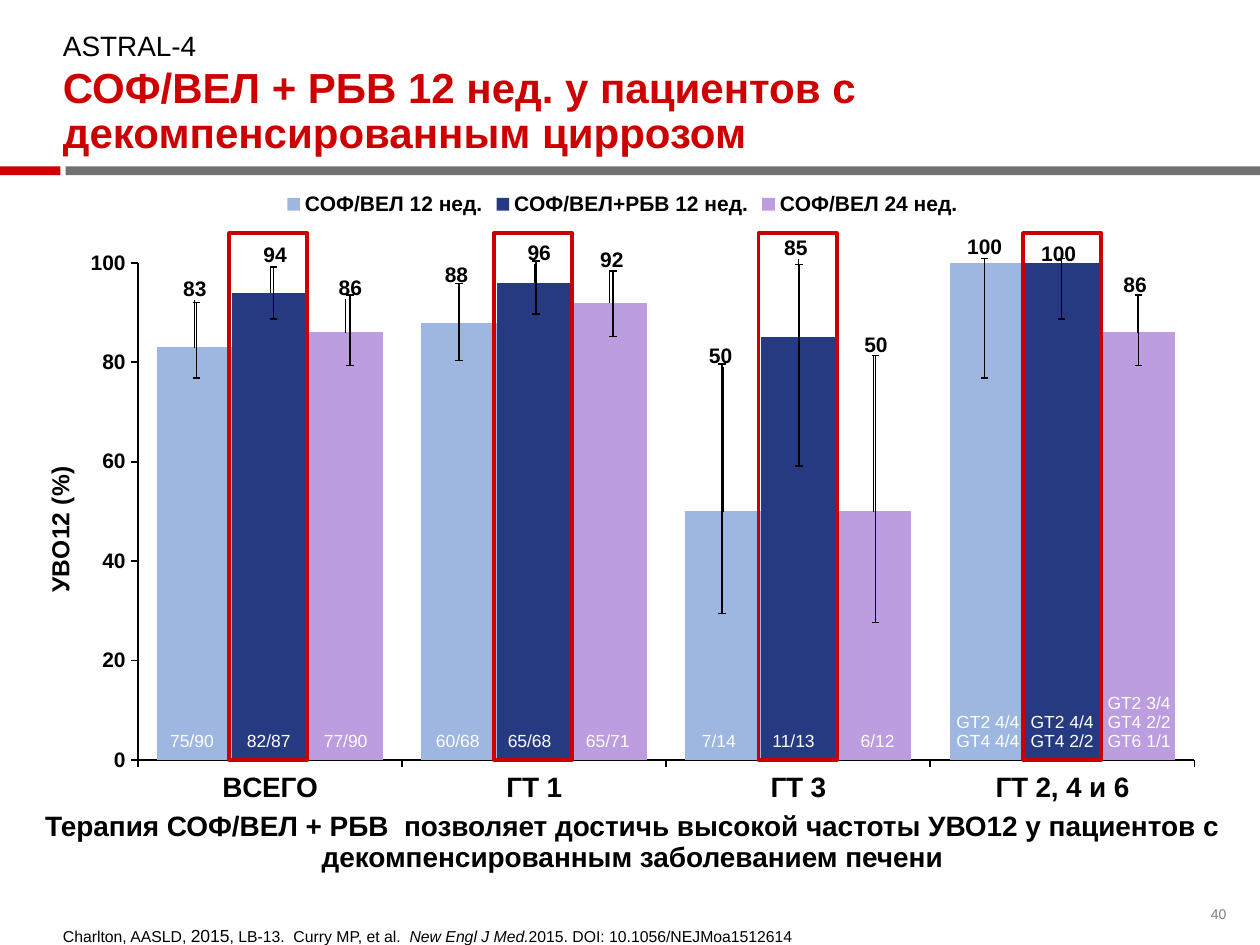
"""Build the ASTRAL-4 slide with response rates by genotype."""
from dataclasses import dataclass

from lxml.etree import SubElement
from pptx import Presentation
from pptx.chart.data import CategoryChartData
from pptx.dml.color import RGBColor
from pptx.enum.chart import XL_CHART_TYPE, XL_LABEL_POSITION, XL_LEGEND_POSITION, XL_TICK_MARK
from pptx.enum.shapes import MSO_SHAPE
from pptx.enum.text import MSO_ANCHOR, PP_ALIGN
from pptx.oxml import parse_xml
from pptx.oxml.ns import nsdecls, qn
from pptx.util import Inches, Pt

BLACK = RGBColor(0x00, 0x00, 0x00)
WHITE = RGBColor(0xFF, 0xFF, 0xFF)
RED = RGBColor(0xCC, 0x00, 0x00)
GRAY = RGBColor(0x71, 0x71, 0x71)
NUMBER_GRAY = RGBColor(0x80, 0x80, 0x80)
LIGHT_BLUE = RGBColor(0x9D, 0xB7, 0xE0)
NAVY = RGBColor(0x26, 0x3A, 0x81)
LILAC = RGBColor(0xBC, 0x9D, 0xDF)
FONT = "Arial"
CHART_WIDTH, CHART_HEIGHT = 9.4, 5.13
GROUP_STEP, SERIES_STEP = 2.085, 0.61
COUNT_BOTTOM, COUNT_LINE = 5.96, 0.15
CATEGORIES = ("ВСЕГО", "ГT 1", "ГT 3", "ГT 2, 4 и 6")


@dataclass(frozen=True)
class Bar:
    """One bar: value, label offset, error range, and patient counts."""
    value: int
    label_shift: float
    label_lift: float
    error_top: float
    error_bottom: float
    counts: str
    counts_left: float


@dataclass(frozen=True)
class Treatment:
    """One chart series."""
    name: str
    color: RGBColor
    bars: tuple[Bar, ...]


TREATMENTS = (
    Treatment("СОФ/ВЕЛ 12 нед.", LIGHT_BLUE, (
        Bar(83, 0, 0.33, 2.4, 3, "75/90", 1.35),
        Bar(88, -0.02, 0.25, 2.25, 2.86, "60/68", 3.46),
        Bar(50, -0.02, 1.1, 2.89, 4.87, "7/14", 5.57),
        Bar(100, -0.02, 0, 2.05, 3, "GT2 4/4\nGT4 4/4", 7.59))),
    Treatment("СОФ/ВЕЛ+РБВ 12 нед.", NAVY, (
        Bar(94, 0.04, 0.17, 2.12, 2.53, "82/87", 1.96),
        Bar(96, 0.04, 0.11, 2.07, 2.49, "65/68", 4.03),
        Bar(85, -0.02, 0.58, 2.1, 3.7, "11/13", 6.13),
        Bar(100, -0.03, -0.06, 2.05, 2.53, "GT2 4/4\nGT4 2/2", 8.18))),
    Treatment("СОФ/ВЕЛ 24 нед.", LILAC, (
        Bar(86, 0.04, 0.22, 2.34, 2.9, "77/90", 2.57),
        Bar(92, 0.02, 0.21, 2.15, 2.67, "65/71", 4.65),
        Bar(50, 0.02, 1.19, 2.82, 4.94, "6/12", 6.83),
        Bar(86, -0.02, 0.25, 2.34, 2.9, "GT2 3/4\nGT4 2/2\nGT6 1/1", 8.79))),
)


def style_font(font, size: float, color: RGBColor = BLACK, bold: bool = False) -> None:
    """Apply the slide typeface with a size, colour and weight."""
    font.name, font.size, font.bold = FONT, Pt(size), bold
    font.color.rgb = color


def add_text(slide, text: str, box: tuple, size: float, color: RGBColor = BLACK, bold: bool = False,
             align=PP_ALIGN.LEFT, anchor=MSO_ANCHOR.TOP, spacing: float = 0.9):
    """Add a text box without margins and return its text frame."""
    frame = slide.shapes.add_textbox(*map(Inches, box)).text_frame
    frame.word_wrap, frame.vertical_anchor = True, anchor
    frame.margin_left = frame.margin_top = frame.margin_right = frame.margin_bottom = 0
    frame.text = text
    for paragraph in frame.paragraphs:
        paragraph.alignment, paragraph.line_spacing = align, spacing
        for run in paragraph.runs:
            style_font(run.font, size, color, bold)
    return frame


def add_rectangle(slide, box: tuple, fill: RGBColor | None = None, line: RGBColor | None = None) -> None:
    """Add a filled or outlined rectangle."""
    shape = slide.shapes.add_shape(MSO_SHAPE.RECTANGLE, *map(Inches, box))
    shape.shadow.inherit = False
    if fill is None:
        shape.fill.background()
    else:
        shape.fill.solid()
        shape.fill.fore_color.rgb = fill
    if line is None:
        shape.line.fill.background()
    else:
        shape.line.color.rgb, shape.line.width = line, Pt(2.25)


def add_error_bar(slide, center: float, top: float, bottom: float) -> None:
    """Draw a vertical error bar with caps."""
    left, right = center - 0.03, center + 0.03
    builder = slide.shapes.build_freeform(Inches(left), Inches(top))
    builder.add_line_segments([(Inches(right), Inches(top))], close=False)
    for start, end in (((left, bottom), (right, bottom)), ((center, top), (center, bottom))):
        builder.move_to(*map(Inches, start))
        builder.add_line_segments([tuple(map(Inches, end))], close=False)
    shape = builder.convert_to_shape()
    shape.shadow.inherit = False
    shape.fill.background()
    shape.line.color.rgb, shape.line.width = BLACK, Pt(0.88)


def make_layout(**values):
    """Make a manual chart layout element."""
    layout = parse_xml(f"<c:layout {nsdecls('c')}><c:manualLayout/></c:layout>")
    for name, value in values.items():
        SubElement(layout[0], qn(f"c:{name}")).set("val", str(value))
    return layout


def style_series(series, treatment: Treatment) -> None:
    """Colour a series and place its value labels."""
    series.format.fill.solid()
    series.format.fill.fore_color.rgb = treatment.color
    series.data_labels.show_value = True
    style_font(series.data_labels.font, 12, bold=True)
    for index, bar in enumerate(treatment.bars):
        label = series.points[index].data_label
        style_font(label.font, 12, bold=True)
        label.position = XL_LABEL_POSITION.OUTSIDE_END
    for element, bar in zip(series._element.xpath(".//c:dLbl"), treatment.bars):
        element.find(qn("c:idx")).addnext(make_layout(
            x=round(bar.label_shift / CHART_WIDTH, 4), y=round(-bar.label_lift / CHART_HEIGHT, 4)))


def add_response_chart(slide) -> None:
    """Add the clustered column chart."""
    data = CategoryChartData()
    data.categories = CATEGORIES
    for treatment in TREATMENTS:
        data.add_series(treatment.name, [bar.value for bar in treatment.bars])
    chart = slide.shapes.add_chart(
        XL_CHART_TYPE.COLUMN_CLUSTERED, Inches(0.24), Inches(1.42),
        Inches(CHART_WIDTH), Inches(CHART_HEIGHT), data).chart
    style_font(chart.font, 10)
    chart.has_title = False
    chart.has_legend = True
    chart.legend.position = XL_LEGEND_POSITION.TOP
    chart.legend.include_in_layout = False
    style_font(chart.legend.font, 12, bold=True)
    plot = chart.plots[0]
    plot.gap_width, plot.overlap, plot.vary_by_categories = 51, 0, False
    for series, treatment in zip(plot.series, TREATMENTS):
        style_series(series, treatment)
    for axis, size in ((chart.category_axis, 16), (chart.value_axis, 12)):
        axis.has_major_gridlines = False
        axis.major_tick_mark, axis.minor_tick_mark = XL_TICK_MARK.OUTSIDE, XL_TICK_MARK.NONE
        axis.format.line.color.rgb, axis.format.line.width = BLACK, Pt(1)
        style_font(axis.tick_labels.font, size, bold=True)
    axis = chart.value_axis
    axis.minimum_scale, axis.maximum_scale, axis.major_unit = 0, 100, 20
    title = axis.axis_title
    title.text_frame.text = "УВО12 (%)"
    style_font(title.text_frame.paragraphs[0].runs[0].font, 14, bold=True)
    for layout in title._element.findall(qn("c:layout")):
        title._element.remove(layout)
    title._element.find(qn("c:tx")).addnext(make_layout(xMode="edge", yMode="edge", x=0.008, y=0.438))
    plot_area = chart._chartSpace.chart.plotArea
    for layout in plot_area.findall(qn("c:layout")):
        plot_area.remove(layout)
    plot_area.insert(0, make_layout(layoutTarget="inner", xMode="edge", yMode="edge",
                                    x=0.091, y=0.13, w=0.892, h=0.769))


def main() -> None:
    """Build and save the slide."""
    presentation = Presentation()
    presentation.slide_width, presentation.slide_height = Inches(10), Inches(7.5)
    slide = presentation.slides.add_slide(presentation.slide_layouts[6])
    add_rectangle(slide, (0.52, 1.32, 9.48, 0.07), fill=GRAY)
    add_rectangle(slide, (0, 1.32, 0.48, 0.07), fill=RED)
    add_text(slide, "40", (9.61, 7.2, 0.35, 0.27), 8, NUMBER_GRAY)
    add_response_chart(slide)
    for index in range(len(CATEGORIES)):
        add_rectangle(slide, (1.82 + 2.1 * index, 1.85, 0.62, 4.18), line=RED)
    add_text(slide, "СОФ/ВЕЛ + РБВ 12 нед. у пациентов с декомпенсированным циррозом",
             (0.5, 0.51, 9, 0.74), 24, RED, True, anchor=MSO_ANCHOR.BOTTOM)
    add_text(slide, "ASTRAL-4", (0.5, 0.17, 9, 0.33), 16, anchor=MSO_ANCHOR.BOTTOM)
    add_text(slide, "Терапия СОФ/ВЕЛ + РБВ  позволяет достичь высокой частоты УВО12 "
             "у пациентов с декомпенсированным заболеванием печени",
             (0.26, 6.45, 9.52, 0.48), 16, bold=True, align=PP_ALIGN.CENTER)
    for series_index, treatment in enumerate(TREATMENTS):
        for group_index, bar in enumerate(treatment.bars):
            center = 1.56 + SERIES_STEP * series_index + GROUP_STEP * group_index
            add_error_bar(slide, center, bar.error_top, bar.error_bottom)
            height = COUNT_LINE * len(bar.counts.splitlines())
            add_text(slide, bar.counts, (bar.counts_left, COUNT_BOTTOM - height, 0.65, height), 10, WHITE)
    reference = add_text(slide, "Charlton, AASLD, ", (0.5, 7.24, 6.54, 0.27), 9,
                         anchor=MSO_ANCHOR.BOTTOM, spacing=1.0).paragraphs[0]
    for text, size, italic in (("2015", 10, False), (", LB-13.  Curry MP, et al.  ", 9, False),
                               ("New Engl J Med.", 9, True), ("2015. DOI: 10.1056/NEJMoa1512614", 9, False)):
        run = reference.add_run()
        run.text = text
        style_font(run.font, size)
        run.font.italic = italic
    presentation.save("out.pptx")


if __name__ == "__main__":
    main()
